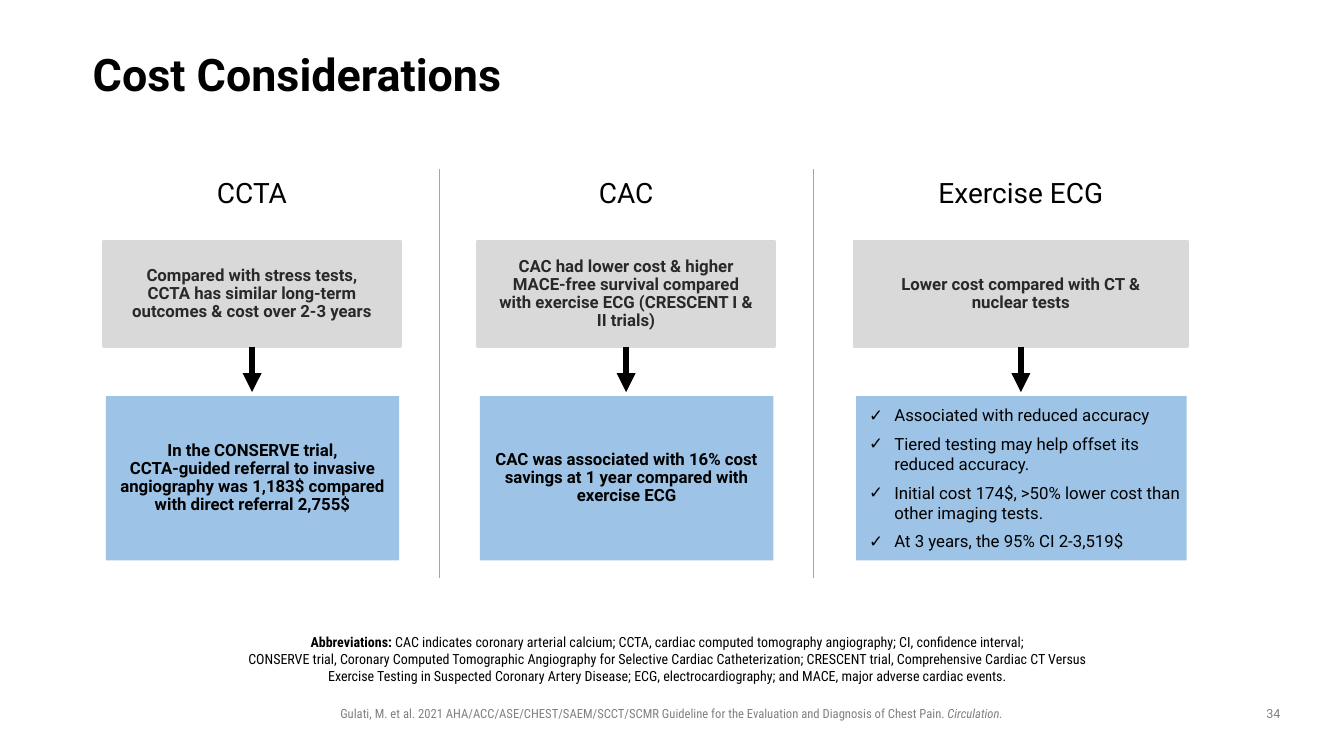
from copy import deepcopy

from lxml.etree import SubElement
from pptx import Presentation
from pptx.dml.color import RGBColor
from pptx.enum.shapes import MSO_CONNECTOR as Link, MSO_SHAPE as Shape
from pptx.enum.text import MSO_ANCHOR as Anchor, PP_ALIGN as Align
from pptx.oxml.ns import qn
from pptx.util import Pt

PX = 9144  # EMU, 100 px to the inch
SIZE = (1333, 750)

TITLE = "Cost Considerations"
COLUMNS = [
    {"left": 103, "width": 294, "head": "CCTA",
     "claim": "Compared with stress tests, CCTA has similar long-term outcomes "
              "& cost over 2-3 years",
     "proof": ["In the CONSERVE trial,\nCCTA-guided referral to invasive angiography "
               "was 1,183$ compared with direct referral 2,755$"]},
    {"left": 474, "width": 294, "head": "CAC",
     "claim": "CAC had lower cost & higher MACE-free survival compared with "
              "exercise ECG (CRESCENT I & II trials)",
     "proof": ["CAC was associated with 16% cost savings at 1 year compared with "
               "exercise ECG"]},
    {"left": 847, "width": 331, "head": "Exercise ECG",
     "claim": "Lower cost compared with CT & nuclear tests",
     "proof": ["Associated with reduced accuracy",
               "Tiered testing may help offset its reduced accuracy.",
               "Initial cost 174$, >50% lower cost than other imaging tests.",
               "At 3 years, the 95% CI 2-3,519$"]},
]
DIVIDERS = [436, 807]
ABBREVS = [
    ("Abbreviations: ", {"bold": True}),
    ("CAC indicates coronary arterial calcium; CCTA, cardiac computed tomography "
     "angiography; CI, confidence interval;\nCONSERVE trial, Coronary Computed "
     "Tomographic Angiography for Selective Cardiac Catheterization; CRESCENT trial, "
     "Comprehensive Cardiac CT Versus Exercise Testing in Suspected Coronary Artery "
     "Disease; ECG, electrocardiography; and MACE, major adverse cardiac events.", {}),
]
SOURCE = [
    ("Gulati, M. et al. 2021 AHA/ACC/ASE/CHEST/SAEM/SCCT/SCMR Guideline for the "
     "Evaluation and Diagnosis of Chest Pain. ", {}),
    ("Circulation.", {"italic": True}),
]
PAGE = "34"

FONT, SLIM = "Roboto", "Roboto Condensed"
BLACK, DARK, GREY = "000000", "292929", "808080"
PALE, BLUE, RULE = "D9D9D9", "9DC3E6", "A6A6A6"
INSET = (10, 5, 10, 5)
CENTER = {"alignment": Align.CENTER}
TIGHT = {**CENTER, "line_spacing": 0.9}
LIST = {"space_after": Pt(6)}


def color(code):
    return RGBColor.from_string(code)


def px(*values):
    return [round(v * PX) for v in values]


def assign(target, values):
    for name, value in values.items():
        setattr(target, name, value)


def add_run(para, text, style):
    """Add one styled run per line, with line breaks of the same size between."""
    for i, line in enumerate(text.split("\n")):
        if i:
            para.add_line_break()
            para._p[-1].append(deepcopy(run._r.rPr))
        run = para.add_run()
        run.text = line
        assign(run.font, {k: v for k, v in style.items() if k != "color"})
        run.font.color.rgb = color(style["color"])


def add_check(para):
    props = para._p.get_or_add_pPr()
    props.set("marL", str(38 * PX))
    props.set("indent", str(-25 * PX))
    SubElement(props, qn("a:buFont"), typeface="Arial")
    SubElement(props, qn("a:buChar"), char="✓")


def write(shape, paras, font, size, code, form=CENTER, inset=INSET,
          anchor=Anchor.TOP, bold=False, check=False):
    """Fill a shape with paragraphs, each a string or a list of (text, style)."""
    frame = shape.text_frame
    sides = ("margin_left", "margin_top", "margin_right", "margin_bottom")
    assign(frame, {"word_wrap": True, "vertical_anchor": anchor,
                   **dict(zip(sides, px(*inset)))})
    base = {"name": font, "size": Pt(size), "color": code, "bold": bold}
    for i, runs in enumerate(paras):
        para = frame.add_paragraph() if i else frame.paragraphs[0]
        assign(para, form)
        if check:
            add_check(para)
        for text, style in [(runs, {})] if isinstance(runs, str) else runs:
            add_run(para, text, {**base, **style})


def add_text(slide, box, *args, **options):
    write(slide.shapes.add_textbox(*px(*box)), *args, **options)


def add_box(slide, box, fill, edge=0):
    shape = slide.shapes.add_shape(Shape.RECTANGLE, *px(*box))
    shape.shadow.inherit = False
    shape.fill.solid()
    shape.fill.fore_color.rgb = color(fill)
    if edge:
        shape.line.color.rgb = color(fill)
        shape.line.width = Pt(edge)
    else:
        shape.line.fill.background()
    return shape


def add_line(slide, x, top, end, code, width):
    line = slide.shapes.add_connector(Link.STRAIGHT, *px(x, top, x, end))
    line.line.color.rgb = color(code)
    line.line.width = Pt(width)
    SubElement(line._element.spPr, qn("a:effectLst"))
    return line


def add_column(slide, left, width, head, claim, proof):
    add_text(slide, (left, 169, width, 44), [head], FONT, 20, BLACK)

    top = add_box(slide, (left, 239, width, 105), PALE, 2)
    write(top, [claim], FONT, 12, DARK, TIGHT, (20,) * 4, Anchor.MIDDLE, bold=True)

    arrow = add_line(slide, left + width / 2, 344, 389, BLACK, 4.5)
    arrow.begin_connect(top, 2)
    SubElement(arrow.line._get_or_add_ln(), qn("a:tailEnd"), type="triangle")

    low = add_box(slide, (left + 2, 393, width - 3, 163), BLUE)
    many = len(proof) > 1
    form = {**LIST, "alignment": Align.LEFT} if many else TIGHT
    write(low, proof, FONT, 12, BLACK, form, (0,) * 4, Anchor.MIDDLE,
          bold=not many, check=many)


def main():
    deck = Presentation()
    deck.slide_width, deck.slide_height = px(*SIZE)
    slide = deck.slides.add_slide(deck.slide_layouts[6])

    add_text(slide, (92, 40, 1150, 72), [TITLE], FONT, 32, BLACK,
             {"line_spacing": 0.9}, (0,) * 4, Anchor.MIDDLE, bold=True)
    for x in DIVIDERS:
        add_line(slide, x, 168, 573, RULE, 0.5)
    for column in COLUMNS:
        add_column(slide, **column)
    add_text(slide, (244, 624, 845, 57), [ABBREVS], SLIM, 10, BLACK,
             inset=(0, 5, 10, 5))
    add_text(slide, (317, 695, 698, 25), [SOURCE], SLIM, 9, GREY)
    add_text(slide, (1242, 695, 42, 26), [PAGE], FONT, 9, GREY)

    deck.save("out.pptx")


if __name__ == "__main__":
    main()
